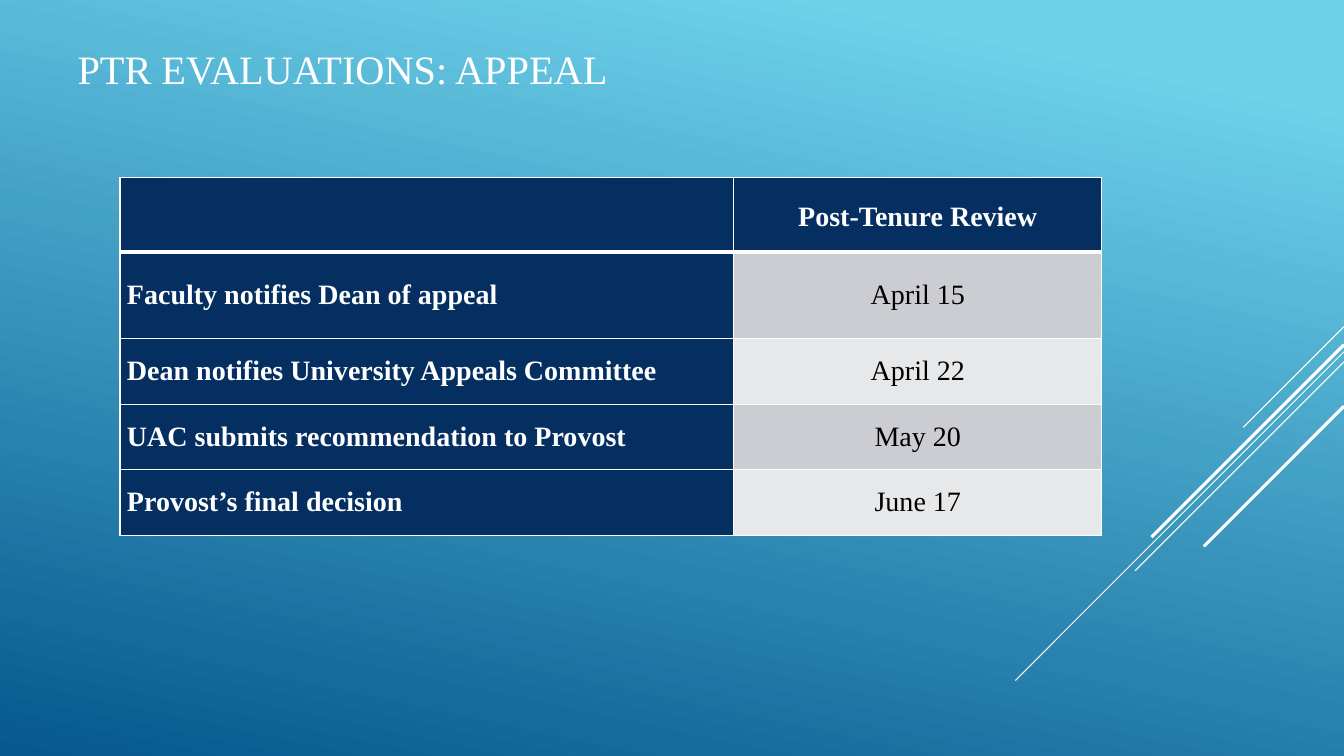
import pptx
import pptx.dml.color
import pptx.enum.shapes
import pptx.enum.text
import pptx.oxml
import pptx.oxml.ns
import pptx.util

Pt = pptx.util.Pt
ALIGN = pptx.enum.text.PP_ALIGN
MIDDLE = pptx.enum.text.MSO_ANCHOR.MIDDLE
WIDTH, HEIGHT = 960, 540
WHITE, BLACK, NAVY = "FFFFFF", "000000", "052F61"
BANDS = ("CCCDD2", "E7E8EA")
SCHEDULE = (
    ("", "Post-Tenure Review"),
    ("Faculty notifies Dean of appeal", "April 15"),
    ("Dean notifies University Appeals Committee", "April 22"),
    ("UAC submits recommendation to Provost", "May 20"),
    ("Provost’s final decision", "June 17"),
)
COLUMN_WIDTHS = (438.5, 262.8)
ROW_HEIGHTS = (53.3, 61.9, 46.8, 46.8, 46.8)
DIAGONALS = (
    (233.3, 72, 0.75),
    (251.3, 234.7, 0.75),
    (258.5, 149.2, 0.75),
    (246.2, 137.5, 2.25),
    (290.2, 100.1, 2.25),
)


def color(hex_string):
    return pptx.dml.color.RGBColor.from_string(hex_string)


def apply(target, values):
    for name, value in values.items():
        setattr(target, name, value)


class SlideBuilder:
    """Holds the slide and its style, and adds each kind of element."""

    font_name = "Times New Roman"

    def __init__(self, slide):
        self.slide = slide

    def background(self, stops, angle):
        fill = self.slide.background.fill
        fill.gradient()
        fill.gradient_angle = angle
        for stop, (position, hex_string) in zip(fill.gradient_stops, stops):
            stop.position = position
            stop.color.rgb = color(hex_string)

    def diagonal(self, top, length, width):
        line = self.slide.shapes.add_connector(
            pptx.enum.shapes.MSO_CONNECTOR.STRAIGHT,
            Pt(WIDTH), Pt(top), Pt(WIDTH - length), Pt(top + length),
        )
        line.line.color.rgb = color(WHITE)
        line.line.width = Pt(width)
        properties = line._element.spPr
        properties.append(properties.makeelement(pptx.oxml.ns.qn("a:effectLst"), {}))

    def text(self, frame, text, size, hex_string, bold, paragraph_format):
        paragraph = frame.paragraphs[0]
        apply(paragraph, paragraph_format)
        run = paragraph.add_run()
        run.text = text
        apply(run.font, {"name": self.font_name, "size": Pt(size), "bold": bold})
        run.font.color.rgb = color(hex_string)

    def title(self, text, left, top, width, height):
        title = self.slide.shapes.title
        apply(title, {"left": Pt(left), "top": Pt(top), "width": Pt(width), "height": Pt(height)})
        apply(title.text_frame, {"vertical_anchor": MIDDLE, "word_wrap": True})
        self.text(title.text_frame, text, 28.8, WHITE, False, {"alignment": ALIGN.LEFT})

    def borders(self, cell, widths):
        properties = cell._tc.get_or_add_tcPr()
        for side, width in zip("LRTB", widths):
            properties.append(pptx.oxml.parse_xml(
                f'<a:ln{side} {pptx.oxml.ns.nsdecls("a")} w="{Pt(width)}"><a:solidFill>'
                f'<a:srgbClr val="{WHITE}"/></a:solidFill></a:ln{side}>'
            ))

    def cell(self, cell, text, row, column):
        header, label = row == 0, column == 0
        self.borders(cell, (1, 1, 3 if row == 1 else 1, 3 if header else 1))
        cell.fill.solid()
        cell.fill.fore_color.rgb = color(NAVY if header or label else BANDS[(row - 1) % 2])
        apply(cell, {
            "vertical_anchor": MIDDLE,
            "margin_left": Pt(5), "margin_right": Pt(5), "margin_top": 0, "margin_bottom": 0,
        })
        if text:
            spacing = {"line_spacing": 1.15} if header else {
                "space_before": Pt(6), "space_after": Pt(6)}
            spacing["alignment"] = ALIGN.LEFT if label else ALIGN.CENTER
            strong = header or label
            self.text(cell.text_frame, text, 20, WHITE if strong else BLACK, strong, spacing)

    def table(self, rows, left, top):
        table = self.slide.shapes.add_table(
            len(rows), len(COLUMN_WIDTHS), Pt(left), Pt(top),
            Pt(sum(COLUMN_WIDTHS)), Pt(sum(ROW_HEIGHTS)),
        ).table
        apply(table, {"first_col": True, "horz_banding": True})
        for column, width in zip(table.columns, COLUMN_WIDTHS):
            column.width = Pt(width)
        for row, height in zip(table.rows, ROW_HEIGHTS):
            row.height = Pt(height)
        for row, texts in enumerate(rows):
            for column, text in enumerate(texts):
                self.cell(table.cell(row, column), text, row, column)


def main():
    presentation = pptx.Presentation()
    apply(presentation, {"slide_width": Pt(WIDTH), "slide_height": Pt(HEIGHT)})
    builder = SlideBuilder(presentation.slides.add_slide(presentation.slide_layouts[5]))
    builder.background(((0.1, "6ED2EB"), (1, "06588E")), 258)
    for diagonal in DIAGONALS:
        builder.diagonal(*diagonal)
    builder.title("PTR EVALUATIONS: APPEAL", 48.2, 28.1, 792, 41.8)
    builder.table(SCHEDULE, 85.7, 126.7)
    presentation.save("out.pptx")


if __name__ == "__main__":
    main()
